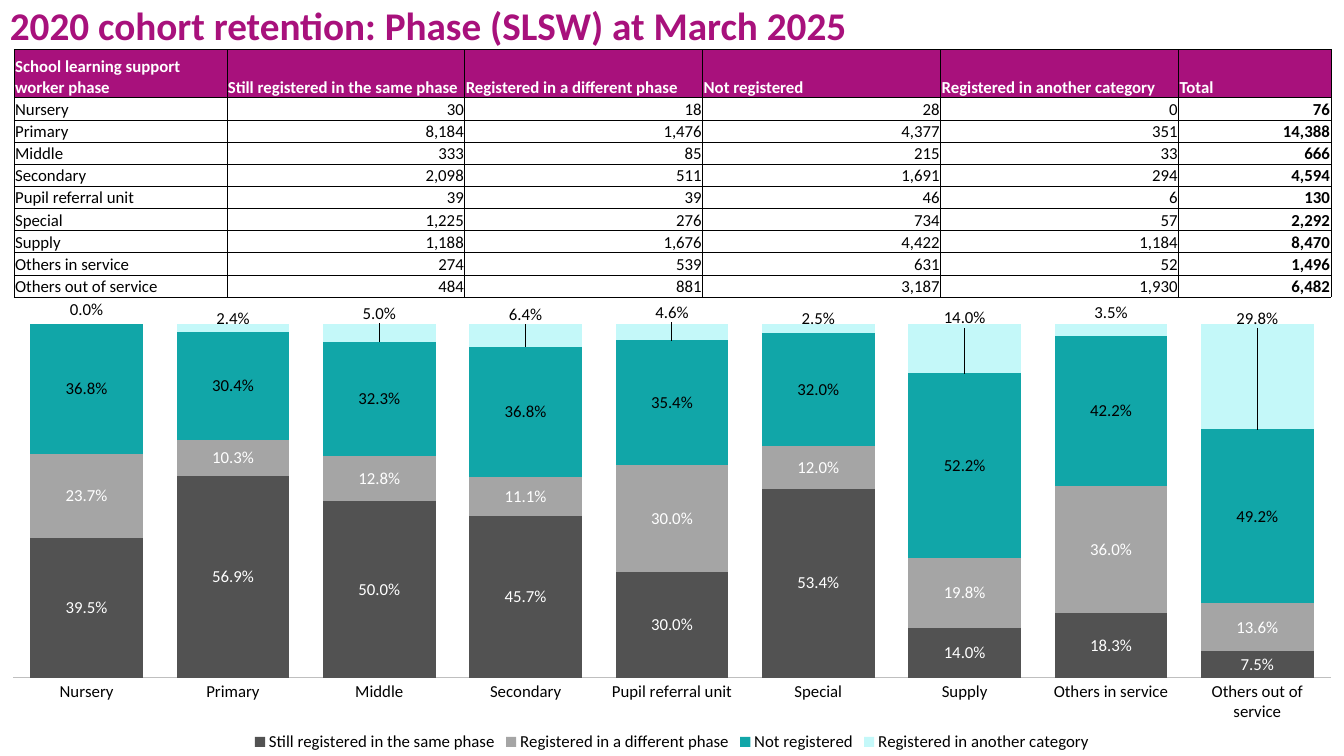
import pptx
import pptx.util
import pptx.chart.data
import pptx.dml.color
import pptx.enum.chart
import pptx.enum.text
import pptx.oxml
import pptx.oxml.ns

Inches, Pt = pptx.util.Inches, pptx.util.Pt
RGB = pptx.dml.color.RGBColor.from_string
CHART, TEXT = pptx.enum.chart, pptx.enum.text

theme = {
    "font": "Calibri",
    "title_size": Pt(28),
    "body_size": Pt(12),
    "magenta": RGB("A8117C"),
    "white": RGB("FFFFFF"),
    "black": RGB("000000"),
    "axis": RGB("BFBFBF"),
    "outcome_fills": [RGB(c) for c in ("525252", "A5A5A5", "11A6A8", "C4F8F9")],
}

outcomes = ["Still registered in the same phase", "Registered in a different phase",
            "Not registered", "Registered in another category"]
phase_counts = {
    "Nursery": [30, 18, 28, 0],
    "Primary": [8184, 1476, 4377, 351],
    "Middle": [333, 85, 215, 33],
    "Secondary": [2098, 511, 1691, 294],
    "Pupil referral unit": [39, 39, 46, 6],
    "Special": [1225, 276, 734, 57],
    "Supply": [1188, 1676, 4422, 1184],
    "Others in service": [274, 539, 631, 52],
    "Others out of service": [484, 881, 3187, 1930],
}
raised_labels = {2: -0.03, 3: -0.04, 4: -0.03, 6: -0.09, 7: -0.02, 8: -0.21}


def style_font(font, color, size=theme["body_size"], bold=False):
    font.name = theme["font"]
    font.size = size
    font.bold = bold
    font.color.rgb = color


def chart_xml(markup):
    return pptx.oxml.parse_xml(markup.replace(">", f" {pptx.oxml.ns.nsdecls('c')}>", 1))


deck = pptx.Presentation()
deck.slide_width, deck.slide_height = Inches(13.33), Inches(7.5)
slide = deck.slides.add_slide(deck.slide_layouts[6])

heading = slide.shapes.add_textbox(Inches(0), Inches(0), Inches(12.15), Inches(0.55)).text_frame
heading.word_wrap = True
heading.vertical_anchor = TEXT.MSO_ANCHOR.MIDDLE
heading.paragraphs[0].line_spacing = 0.9
heading_run = heading.paragraphs[0].add_run()
heading_run.text = "2020 cohort retention: Phase (SLSW) at March 2025"
style_font(heading_run.font, theme["magenta"], theme["title_size"], True)

table_rows = [["School learning support worker phase", *outcomes, "Total"]]
for phase, counts in phase_counts.items():
    table_rows.append([phase, *(f"{n:,}" for n in counts), f"{sum(counts):,}"])

counts_table = slide.shapes.add_table(
    len(table_rows), 6, Inches(0.14), Inches(0.49), Inches(13.06), Inches(2.45)).table
for column, width in zip(counts_table.columns, [2.11, 2.36, 2.36, 2.36, 2.36, 1.51]):
    column.width = Inches(width)

for r, row_texts in enumerate(table_rows):
    is_header = r == 0
    counts_table.rows[r].height = Inches(0.48 if is_header else 0.22)
    for c, cell_text in enumerate(row_texts):
        cell = counts_table.cell(r, c)
        cell.margin_left = cell.margin_right = cell.margin_top = Inches(0.01)
        cell.margin_bottom = 0
        cell.vertical_anchor = TEXT.MSO_ANCHOR.BOTTOM
        for side in ("lnL", "lnR", "lnT", "lnB"):
            cell._tc.get_or_add_tcPr().append(pptx.oxml.parse_xml(
                f'<a:{side} {pptx.oxml.ns.nsdecls("a")} w="{Pt(0.5)}"><a:solidFill>'
                f'<a:srgbClr val="{theme["black"]}"/></a:solidFill></a:{side}>'))
        if is_header:
            cell.fill.solid()
            cell.fill.fore_color.rgb = theme["magenta"]
        else:
            cell.fill.background()
        paragraph = cell.text_frame.paragraphs[0]
        if c > 0 and not is_header:
            paragraph.alignment = TEXT.PP_ALIGN.RIGHT
        run = paragraph.add_run()
        run.text = cell_text
        style_font(run.font, theme["white" if is_header else "black"],
                   bold=is_header or c == 5)

retention = pptx.chart.data.CategoryChartData(number_format="0.0%")
retention.categories = list(phase_counts)
for i, outcome in enumerate(outcomes):
    retention.add_series(
        outcome, [round(counts[i] / sum(counts), 3) for counts in phase_counts.values()])

chart = slide.shapes.add_chart(
    CHART.XL_CHART_TYPE.COLUMN_STACKED_100, Inches(0), Inches(2.94),
    Inches(13.33), Inches(4.56), retention).chart
style_font(chart.font, theme["black"])
chart.has_title = False
chart.has_legend = True
chart.legend.position = CHART.XL_LEGEND_POSITION.BOTTOM
chart.legend.include_in_layout = False
style_font(chart.legend.font, theme["black"])

share_axis = chart.value_axis
share_axis.minimum_scale, share_axis.maximum_scale = 0, 1
share_axis.has_major_gridlines = False
share_axis.visible = False
phase_axis = chart.category_axis
phase_axis.major_tick_mark = CHART.XL_TICK_MARK.NONE
phase_axis.format.line.color.rgb = theme["axis"]
phase_axis.format.line.width = Pt(0.75)
style_font(phase_axis.tick_labels.font, theme["black"])

columns = chart.plots[0]
columns.gap_width = 30
columns.overlap = 100
columns.vary_by_categories = False
label_colors = [theme["white"], theme["white"], theme["black"], theme["black"]]
for i, series in enumerate(columns.series):
    series.format.fill.solid()
    series.format.fill.fore_color.rgb = theme["outcome_fills"][i]
    labels = series.data_labels
    labels.show_value = True
    labels.number_format = "0.0%"
    labels.number_format_is_linked = False
    labels.position = (CHART.XL_LABEL_POSITION.INSIDE_BASE if i == 3
                       else CHART.XL_LABEL_POSITION.CENTER)
    style_font(labels.font, label_colors[i])

other_category = columns.series[3]
for point, rise in raised_labels.items():
    label = other_category.points[point].data_label
    style_font(label.font, theme["black"])
    label.position = CHART.XL_LABEL_POSITION.INSIDE_BASE
    label_idx = other_category._element.xpath(f"c:dLbls/c:dLbl/c:idx[@val='{point}']")[0]
    label_idx.addnext(chart_xml('<c:numFmt formatCode="0.0%" sourceLinked="0"></c:numFmt>'))
    label_idx.addnext(chart_xml(
        f'<c:layout><c:manualLayout><c:x val="0"/><c:y val="{rise}"/>'
        '</c:manualLayout></c:layout>'))

plot_area = chart._chartSpace.chart.plotArea
for old_layout in plot_area.xpath("c:layout"):
    plot_area.remove(old_layout)
plot_area.insert(0, chart_xml(
    '<c:layout><c:manualLayout><c:layoutTarget val="inner"/>'
    '<c:xMode val="edge"/><c:yMode val="edge"/><c:x val="0.01"/><c:y val="0.06"/>'
    '<c:w val="0.98"/><c:h val="0.77"/></c:manualLayout></c:layout>'))

deck.save("out.pptx")
